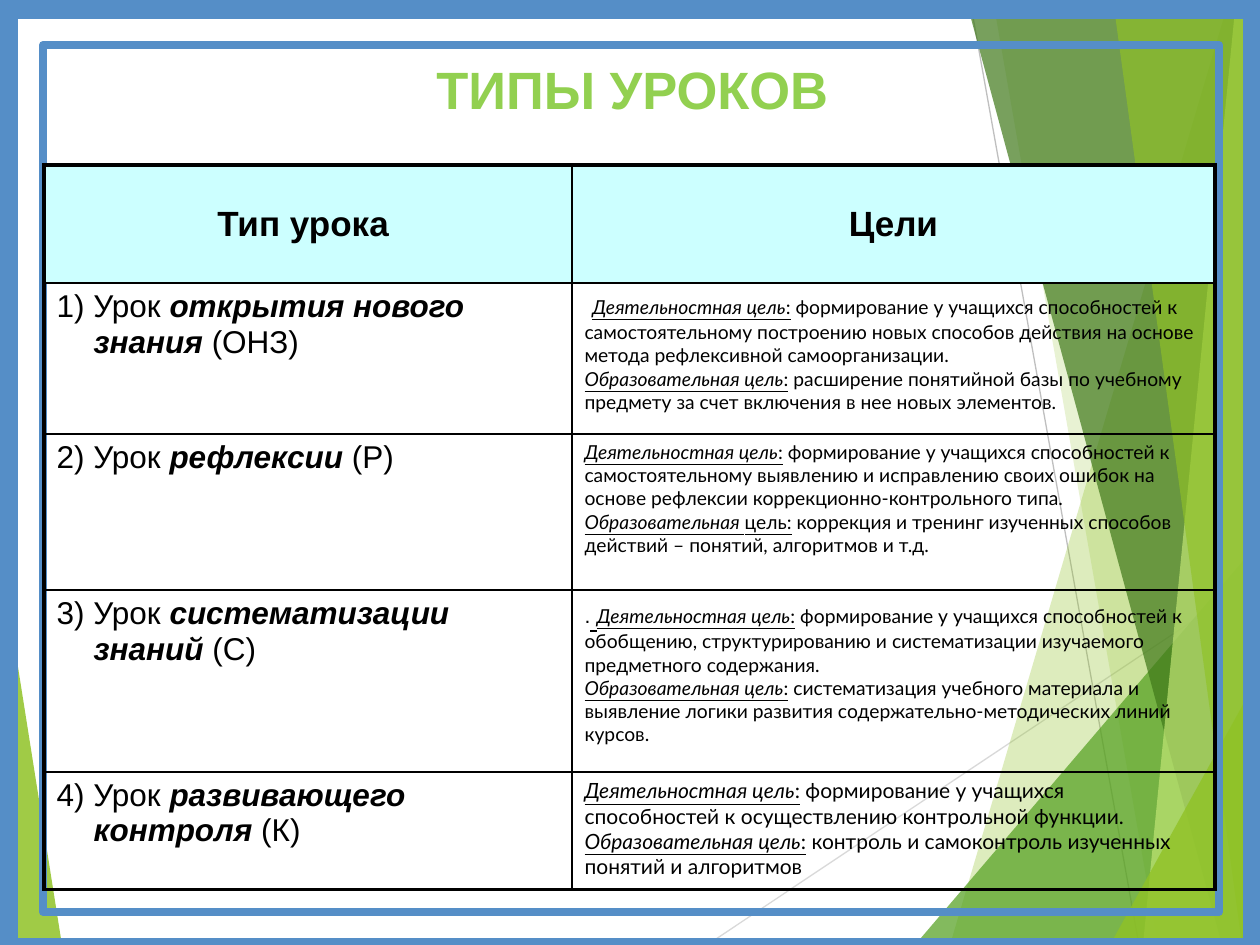
from lxml import etree
from pptx import Presentation
from pptx import util as u
from pptx.dml.color import RGBColor
from pptx.enum import shapes as sh, text as tx
from pptx.oxml.ns import qn

PX = 914400 / 126  # EMU in one px
BLACK = RGBColor(0x00, 0x00, 0x00)
LEAF = RGBColor(0x90, 0xC2, 0x26)
GREEN = RGBColor(0x54, 0xA0, 0x21)
FOREST = RGBColor(0x3F, 0x78, 0x19)
LIME = RGBColor(0xC0, 0xE4, 0x74)
PALE_GREY = RGBColor(0xD9, 0xD9, 0xD9)
GREY = RGBColor(0xBF, 0xBF, 0xBF)
BLUE = RGBColor(0x55, 0x8E, 0xC7)
HEADER_FILL = RGBColor(0xCC, 0xFF, 0xFF)
TITLE_GREEN = RGBColor(0x92, 0xD0, 0x50)


def px(*lengths):
    return [u.Emu(round(length * PX)) for length in lengths]


def add_run(paragraph, words, size, font="Arial", bold=False, italic=False, underline=False):
    run = paragraph.add_run()
    run.text = words
    run.font.size = u.Pt(size)
    run.font.name = font
    run.font.bold = bold
    run.font.italic = italic
    run.font.underline = underline
    run.font.color.rgb = BLACK


prs = Presentation()
prs.slide_width, prs.slide_height = px(1260, 945)
slide = prs.slides.add_slide(prs.slide_layouts[5])

# Thin diagonal lines behind the facets
for ends, color in [((707, 945, 1260, 576), PALE_GREY), ((970, 0, 1139, 945), GREY)]:
    ray = slide.shapes.add_connector(sh.MSO_CONNECTOR.STRAIGHT, *px(*ends))
    ray.line.color.rgb = color
    ray.line.width = u.Pt(0.75)
    etree.SubElement(ray._element.spPr, qn("a:effectLst"))

# Translucent green facets: corners, colour, opacity in percent
facets = [
    ([(0, 553), (62, 945), (0, 945)], LEAF, 85),
    ([(1229, 0), (950, 945), (1260, 945), (1260, 0)], LEAF, 30),
    ([(993, 0), (1158, 945), (1260, 945), (1260, 0)], LEAF, 20),
    ([(915, 945), (1260, 541), (1260, 945)], GREEN, 72),
    ([(966, 0), (1222, 945), (1260, 945), (1260, 0)], FOREST, 70),
    ([(1236, 0), (1143, 945), (1260, 945), (1260, 0)], LIME, 70),
    ([(1113, 0), (1242, 945), (1260, 945), (1258, 0)], LEAF, 65),
    ([(1110, 945), (1260, 674), (1260, 945)], LEAF, 80),
]
for corners, color, opacity in facets:
    outline = slide.shapes.build_freeform(*corners[0], scale=PX)
    outline.add_line_segments(corners[1:], close=True)
    facet = outline.convert_to_shape()
    facet.shadow.inherit = False
    facet.line.fill.background()
    facet.fill.solid()
    facet.fill.fore_color.rgb = color
    tint = facet._element.spPr.find(qn("a:solidFill"))[0]
    etree.SubElement(tint, qn("a:alpha"), val=str(opacity * 1000))

# Double blue frame
for box, width in [((5, 6, 1251, 945), 15), ((43, 45, 1176, 867), 4.5)]:
    frame = slide.shapes.add_shape(sh.MSO_SHAPE.RECTANGLE, *px(*box))
    frame.shadow.inherit = False
    frame.fill.background()
    frame.line.color.rgb = BLUE
    frame.line.width = u.Pt(width)

# Lesson types: name runs are plain, bold italic, plain;
# goals are lead characters with sizes, then (italic label, label end, wording)
lessons = [
    (("1) Урок ", "открытия нового знания ", "(ОНЗ)"), 11, [
        ("Деятельностная цель", ":", " формирование у учащихся способностей к самостоятельному построению новых способов действия на основе метода рефлексивной самоорганизации."),
        ("Образовательная цель", ":", " расширение понятийной базы по учебному предмету за счет включения в нее новых элементов.")]),
    (("2) Урок ", "рефлексии", " (Р)"), 11, [
        ("Деятельностная цель", ":", " формирование у учащихся способностей к самостоятельному выявлению и исправлению своих ошибок на основе рефлексии коррекционно-контрольного типа."),
        ("Образовательная ", "цель:", " коррекция и тренинг изученных способов действий – понятий, алгоритмов и т.д.")]),
    (("3) Урок ", "систематизации знаний ", "(С)"), 11, [
        ("Деятельностная цель", ":", " формирование у учащихся способностей к обобщению, структурированию и систематизации изучаемого предметного содержания."),
        ("Образовательная цель", ":", " систематизация учебного материала и выявление логики развития содержательно-методических линий курсов.")]),
    (("4) Урок ", "развивающего контроля ", "(К)"), 12, [
        ("Деятельностная цель", ":", " формирование у учащихся способностей к осуществлению контрольной функции."),
        ("Образовательная цель", ":", " контроль и самоконтроль изученных понятий и алгоритмов")]),
]

# Table grid
table = slide.shapes.add_table(5, 2, *px(44, 165, 1171, 725)).table
table.first_row = table.horz_banding = False
for column, width in zip(table.columns, px(528, 643)):
    column.width = width
for row, height in zip(table.rows, px(118, 151, 156, 182, 118)):
    row.height = height

# Header row
for cell, heading in zip(table.rows[0].cells, ("Тип урока ", "Цели")):
    cell.vertical_anchor = tx.MSO_ANCHOR.MIDDLE
    heading_line = cell.text_frame.paragraphs[0]
    heading_line.alignment = tx.PP_ALIGN.CENTER
    add_run(heading_line, heading, 20, bold=True)

# Lesson rows
for number, (name, size, goals) in enumerate(lessons, start=1):
    name_line = table.cell(number, 0).text_frame.paragraphs[0]
    indent = px(37)[0]
    name_line._p.get_or_add_pPr().set("marL", str(indent))
    name_line._p.get_or_add_pPr().set("indent", str(-indent))
    for words, strong in zip(name, (False, True, False)):
        add_run(name_line, words, 18, bold=strong, italic=strong)

    goal_frame = table.cell(number, 1).text_frame
    goal_line = goal_frame.paragraphs[0]
    if number == 1:
        add_run(goal_line, " ", 16)
    elif number == 3:
        add_run(goal_line, ".", 12)
        add_run(goal_line, " ", 16, "Lato", italic=True, underline=True)
    for position, (label, label_end, wording) in enumerate(goals):
        if position:
            goal_line = goal_frame.add_paragraph()
        add_run(goal_line, label, size, "Lato", italic=True, underline=True)
        add_run(goal_line, label_end, size, "Lato", underline=True)
        add_run(goal_line, wording, size, "Lato")

# Cell fills and borders: thick around the table, thin inside
for r in range(5):
    for c in range(2):
        cell = table.cell(r, c)
        tcPr = cell._tc.get_or_add_tcPr()
        outer = {"a:lnL": c == 0, "a:lnR": c == 1, "a:lnT": r == 0, "a:lnB": r == 4}
        for side, is_outer in outer.items():
            border = etree.SubElement(tcPr, qn(side), w=str(u.Pt(2.25 if is_outer else 1)))
            ink = etree.SubElement(border, qn("a:solidFill"))
            etree.SubElement(ink, qn("a:srgbClr"), val=str(BLACK))
        if r == 0:
            cell.fill.solid()
            cell.fill.fore_color.rgb = HEADER_FILL
        else:
            cell.fill.background()

# Title, brought in front of the facets
title = slide.shapes.title
slide.shapes._spTree.append(title._element)
title.left, title.top, title.width, title.height = px(34, 35, 1197, 105)
title.text_frame.text = "ТИПЫ УРОКОВ"
title.text_frame.auto_size = tx.MSO_AUTO_SIZE.NONE
title.text_frame.vertical_anchor = tx.MSO_ANCHOR.TOP
title_line = title.text_frame.paragraphs[0]
title_line.alignment = tx.PP_ALIGN.CENTER
title_line.line_spacing = 1.25
title_line.space_before = u.Pt(6)
title_font = title_line.runs[0].font
title_font.name = "Arial"
title_font.size = u.Pt(30)
title_font.bold = True
title_font.color.rgb = TITLE_GREEN

prs.save("out.pptx")
